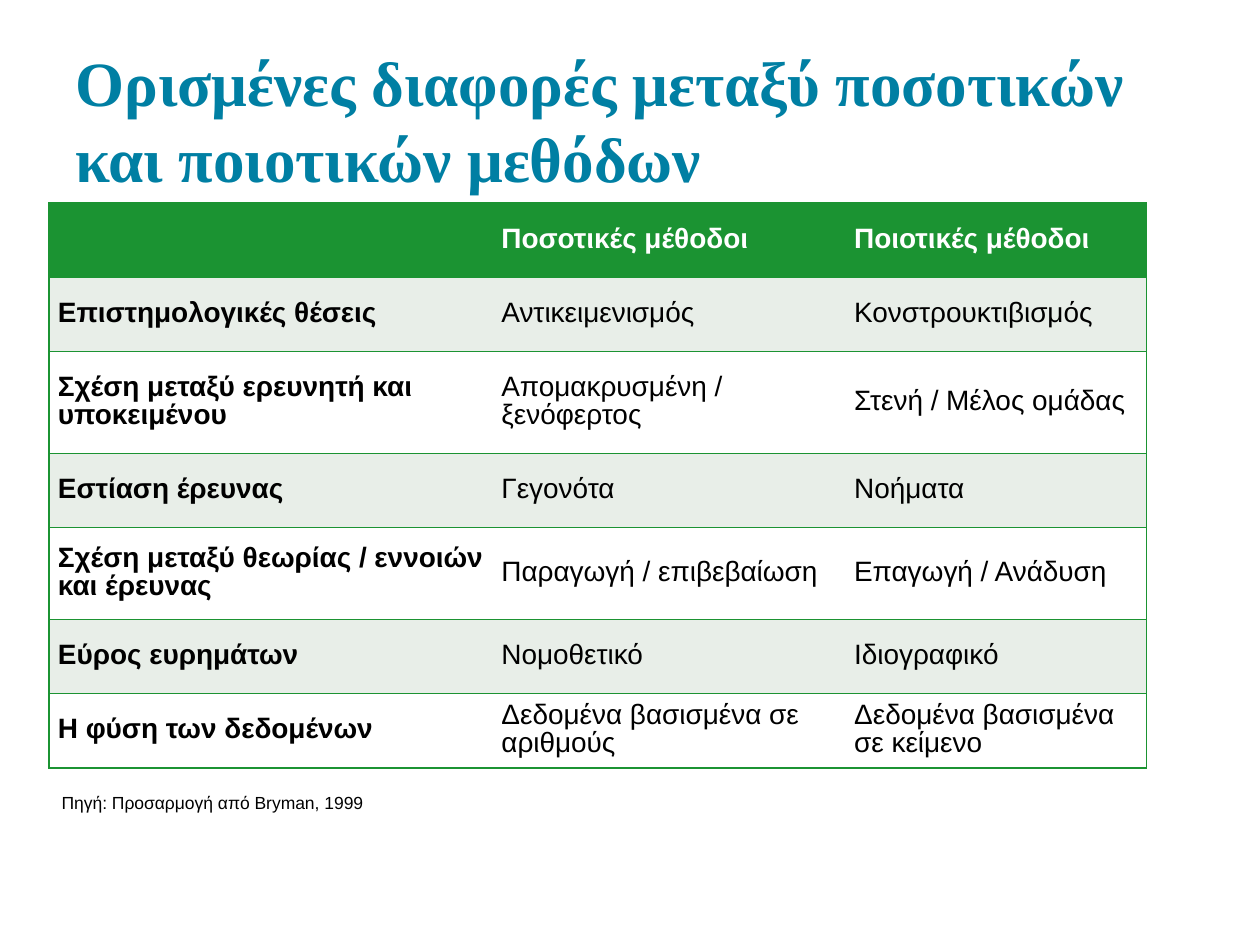
from dataclasses import dataclass

from lxml.etree import SubElement
from pptx import Presentation
from pptx.dml.color import RGBColor
from pptx.enum.text import MSO_ANCHOR
from pptx.oxml.ns import qn
from pptx.util import Inches, Pt


@dataclass(frozen=True)
class Theme:
    title_color: str = "007FA3"
    accent: str = "1B9332"
    band: str = "E8EEE8"
    light: str = "FFFFFF"
    ink: str = "000000"
    title_font: str = "Times New Roman"
    body_font: str = "Arial"
    title_size: int = 36
    table_size: int = 16
    source_size: int = 10
    border_width: int = 1


@dataclass(frozen=True)
class Box:
    left: int
    top: int
    width: int
    height: int

    def share(self, left, top, width, height):
        return Box(
            self.left + int(self.width * left),
            self.top + int(self.height * top),
            int(self.width * width),
            int(self.height * height),
        )

    def bounds(self):
        return self.left, self.top, self.width, self.height


THEME = Theme()
COLUMN_WEIGHTS = [3.52, 2.8, 2.39]
ROW_WEIGHTS = [0.59, 0.59, 0.81, 0.59, 0.73, 0.59, 0.59]
COMPARISON = [
    ["", "Ποσοτικές μέθοδοι", "Ποιοτικές μέθοδοι"],
    ["Επιστημολογικές θέσεις", "Αντικειμενισμός", "Κονστρουκτιβισμός"],
    ["Σχέση μεταξύ ερευνητή και υποκειμένου", "Απομακρυσμένη / ξενόφερτος", "Στενή / Μέλος ομάδας"],
    ["Εστίαση έρευνας", "Γεγονότα", "Νοήματα"],
    ["Σχέση μεταξύ θεωρίας / εννοιών και έρευνας", "Παραγωγή / επιβεβαίωση", "Επαγωγή / Ανάδυση"],
    ["Εύρος ευρημάτων", "Νομοθετικό", "Ιδιογραφικό"],
    ["Η φύση των δεδομένων", "Δεδομένα βασισμένα σε αριθμούς", "Δεδομένα βασισμένα σε κείμενο"],
]


def write_text(frame, text, *, font, size, color, bold=False, line_spacing=None, space_after=None):
    paragraph = frame.paragraphs[0]
    if line_spacing is not None:
        paragraph.line_spacing = Pt(line_spacing)
    if space_after is not None:
        paragraph.space_after = Pt(space_after)
    run = paragraph.add_run()
    run.text = text
    run.font.name = font
    run.font.size = Pt(size)
    run.font.bold = bold
    run.font.color.rgb = RGBColor.from_string(color)


def add_text_box(slide, box, text, anchor, **text_format):
    frame = slide.shapes.add_textbox(*box.bounds()).text_frame
    frame.word_wrap = True
    frame.vertical_anchor = anchor
    frame.margin_left = frame.margin_right = Inches(0.1)
    frame.margin_top = frame.margin_bottom = Inches(0.1)
    write_text(frame, text, **text_format)


def add_title(slide, box):
    add_text_box(
        slide, box, "Ορισμένες διαφορές μεταξύ ποσοτικών και ποιοτικών μεθόδων", MSO_ANCHOR.TOP,
        font=THEME.title_font, size=THEME.title_size, color=THEME.title_color, bold=True,
    )


def add_source(slide, box):
    add_text_box(
        slide, box, "Πηγή: Προσαρμογή από Bryman, 1999", MSO_ANCHOR.BOTTOM,
        font=THEME.body_font, size=THEME.source_size, color=THEME.ink,
    )


def set_borders(cell, visible_sides):
    properties = cell._tc.get_or_add_tcPr()
    for side in "LRTB":
        line = SubElement(properties, qn(f"a:ln{side}"), w=str(Pt(THEME.border_width)))
        if side in visible_sides:
            fill = SubElement(line, qn("a:solidFill"))
            SubElement(fill, qn("a:srgbClr"), val=THEME.accent)
        else:
            SubElement(line, qn("a:noFill"))


def fill_cell(cell, text, row, column):
    header = row == 0
    last_column = len(COLUMN_WEIGHTS) - 1
    set_borders(cell, "TB" + {0: "L", last_column: "R"}.get(column, ""))
    background = THEME.accent if header else THEME.band if row % 2 else THEME.light
    cell.fill.solid()
    cell.fill.fore_color.rgb = RGBColor.from_string(background)
    cell.vertical_anchor = MSO_ANCHOR.MIDDLE
    cell.margin_left = cell.margin_right = Inches(0.07)
    cell.margin_top = cell.margin_bottom = 0
    if text:
        write_text(
            cell.text_frame, text, font=THEME.body_font, size=THEME.table_size,
            color=THEME.light if header else THEME.ink, bold=header or column == 0,
            line_spacing=THEME.table_size, space_after=6,
        )


def add_comparison_table(slide, box):
    table = slide.shapes.add_table(len(ROW_WEIGHTS), len(COLUMN_WEIGHTS), *box.bounds()).table
    for column, weight in zip(table.columns, COLUMN_WEIGHTS):
        column.width = int(box.width * weight / sum(COLUMN_WEIGHTS))
    for row, weight in zip(table.rows, ROW_WEIGHTS):
        row.height = int(box.height * weight / sum(ROW_WEIGHTS))
    for row, texts in enumerate(COMPARISON):
        for column, text in enumerate(texts):
            fill_cell(table.cell(row, column), text, row, column)


def main():
    presentation = Presentation()
    presentation.slide_width = Inches(10)
    presentation.slide_height = Inches(7.5)
    slide = presentation.slides.add_slide(presentation.slide_layouts[6])
    page = Box(0, 0, presentation.slide_width, presentation.slide_height)
    content = page.share(0.039, 0.215, 0.871, 0.657)
    table_share = 0.91
    add_title(slide, page.share(0.05, 0.033, 0.9, 0.156))
    add_comparison_table(slide, content.share(0, 0, 1, table_share))
    add_source(slide, content.share(0, table_share, 1, 1 - table_share))
    presentation.save("out.pptx")


if __name__ == "__main__":
    main()
